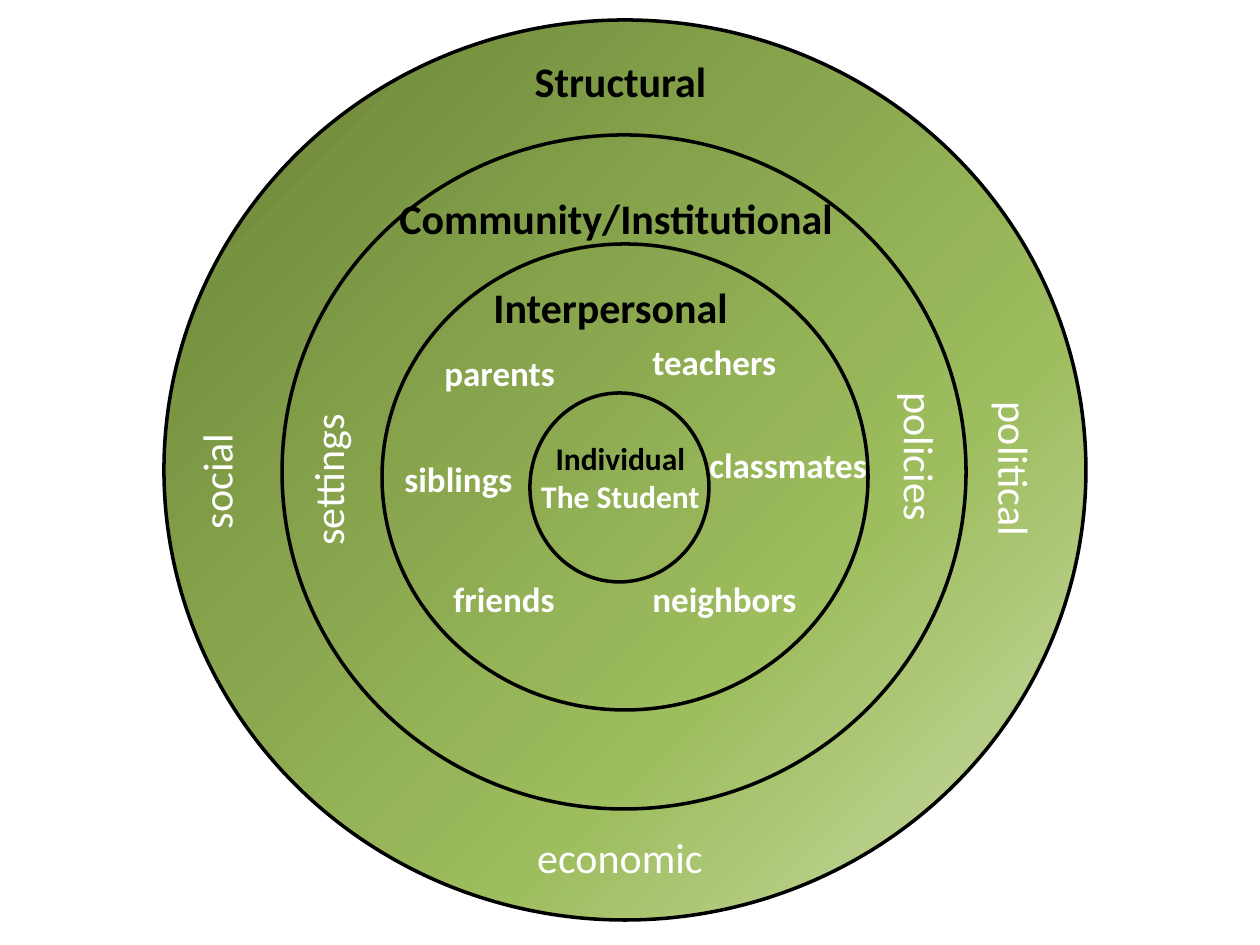
from copy import deepcopy

from pptx import Presentation
from pptx.dml.color import RGBColor
from pptx.enum.shapes import MSO_SHAPE
from pptx.enum.text import PP_ALIGN
from pptx.oxml.ns import qn
from pptx.util import Pt

PX = 914400 / 126
FONT = "Calibri"
BLACK = RGBColor(0, 0, 0)
WHITE = RGBColor(255, 255, 255)
GRADIENT = [
    (0, RGBColor(0x6A, 0x83, 0x36)),
    (0.67, RGBColor(0x9E, 0xBD, 0x5E)),
    (0.93, RGBColor(0xC3, 0xD6, 0x9B)),
]
LEFT, CENTER = PP_ALIGN.LEFT, PP_ALIGN.CENTER

STRUCTURAL_RING = (164, 20, 922, 900)
INNER_RINGS = [
    (282, 135, 684, 674),
    (382, 244, 486, 466),
    (530, 393, 179, 189),
]

LEVELS = [
    ("Structural", 484, 49, 273, CENTER),
    ("Community/Institutional", 387, 186, 486, LEFT),
    ("Interpersonal", 481, 275, 297, LEFT),
]
PEOPLE = [
    ("parents", 432, 345, 146),
    ("teachers", 640, 334, 179),
    ("siblings", 392, 451, 146),
    ("classmates", 697, 437, 183),
    ("friends", 441, 571, 129),
    ("neighbors", 640, 571, 179),
]
FACTORS = [
    ("settings", 238, 437, 179, 270, LEFT),
    ("policies", 810, 459, 221, 90, LEFT),
    ("social", 117, 411, 198, 270, LEFT),
    ("political", 911, 462, 208, 90, LEFT),
    ("economic", 507, 825, 226, 0, CENTER),
]
STUDENT = "Individual\nThe Student"
LEVEL_HEIGHT, PEOPLE_HEIGHT, STUDENT_HEIGHT = 63, 55, 89


def emu(*lengths):
    return [round(length * PX) for length in lengths]


def add_ring(slide, bounds):
    ring = slide.shapes.add_shape(MSO_SHAPE.OVAL, *emu(*bounds))
    ring.shadow.inherit = False
    ring.fill.background()
    ring.line.color.rgb = BLACK
    ring.line.width = Pt(2)
    return ring


def shade(ring):
    ring.fill.gradient()
    ring.fill.gradient_angle = 315
    stop_list = ring._element.spPr.find(qn("a:gradFill")).find(qn("a:gsLst"))
    stop_list.append(deepcopy(stop_list[-1]))
    for stop, (position, color) in zip(ring.fill.gradient_stops, GRADIENT):
        stop.position = position
        stop.color.rgb = color


def add_label(slide, text, bounds, size, colors, bold=True, align=LEFT, rotation=0):
    label = slide.shapes.add_textbox(*emu(*bounds))
    label.rotation = rotation
    label.text_frame.word_wrap = True
    label.text_frame.text = text
    for paragraph, color in zip(label.text_frame.paragraphs, colors):
        paragraph.alignment = align
        font = paragraph.runs[0].font
        font.name = FONT
        font.size = Pt(size)
        font.bold = bold
        font.color.rgb = color


def main():
    prs = Presentation()
    prs.slide_width, prs.slide_height = emu(1260, 945)
    slide = prs.slides.add_slide(prs.slide_layouts[6])

    shade(add_ring(slide, STRUCTURAL_RING))
    for bounds in INNER_RINGS:
        add_ring(slide, bounds)

    for text, x, y, width, align in LEVELS:
        add_label(slide, text, (x, y, width, LEVEL_HEIGHT), 24, [BLACK], align=align)
    for text, x, y, width in PEOPLE:
        add_label(slide, text, (x, y, width, PEOPLE_HEIGHT), 20, [WHITE])
    for text, x, y, width, rotation, align in FACTORS:
        add_label(slide, text, (x, y, width, LEVEL_HEIGHT), 24, [WHITE],
                  bold=False, align=align, rotation=rotation)
    add_label(slide, STUDENT, (513, 433, 215, STUDENT_HEIGHT), 18, [BLACK, WHITE],
              align=CENTER)

    prs.save("out.pptx")


if __name__ == "__main__":
    main()
